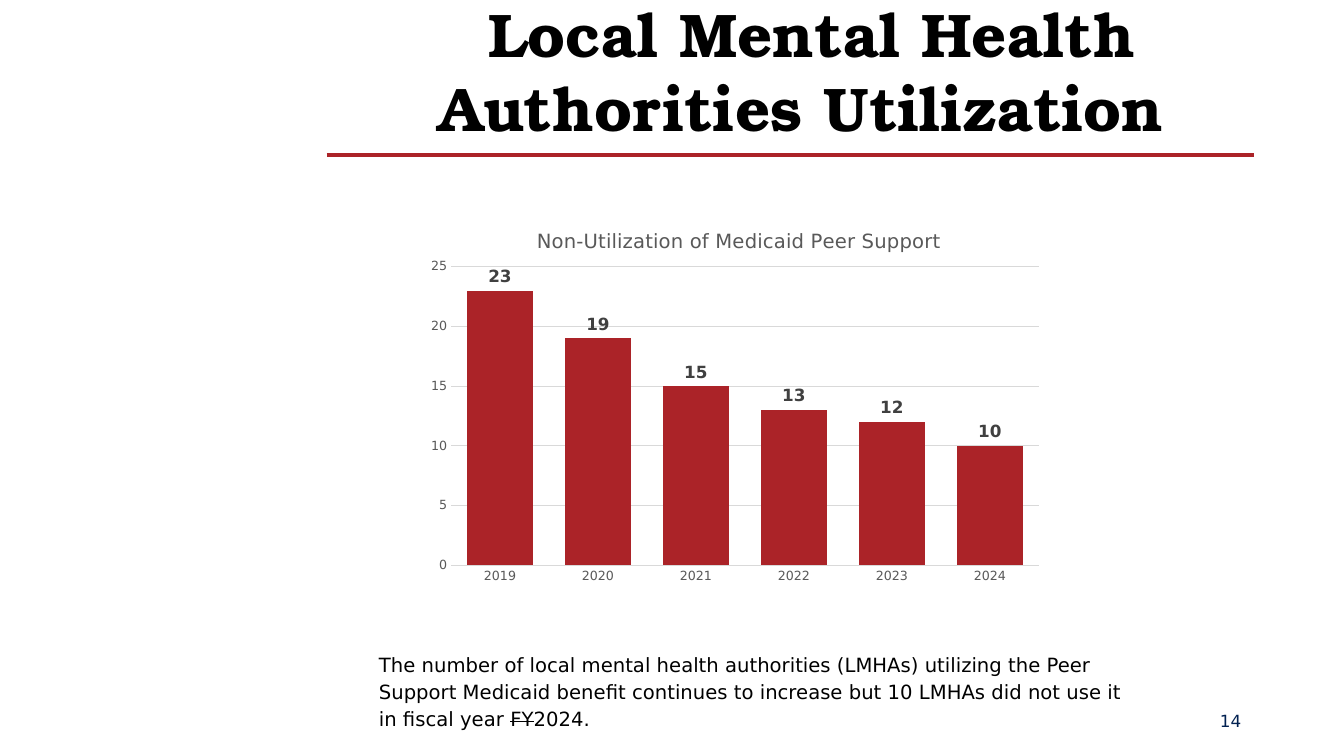
import pptx
import pptx.chart.data
import pptx.dml.color
import pptx.enum.chart
import pptx.enum.shapes
import pptx.enum.text
import pptx.oxml
import pptx.oxml.ns
import pptx.util
from pptx.util import Inches, Pt

COLORS = {"red": "AB2328", "black": "000000", "navy": "022151",
          "axis": "595959", "grid": "D9D9D9", "label": "404040"}
BODY_FONT = "DejaVu Sans"
ALIGN = pptx.enum.text.PP_ALIGN
ANCHOR = pptx.enum.text.MSO_ANCHOR


def style_font(font, size, color, name=BODY_FONT, bold=False):
    font.size = Pt(size)
    font.name = name
    font.bold = bold
    font.color.rgb = pptx.dml.color.RGBColor.from_string(COLORS[color])


def place_in_chart(element, index, **fractions):
    qn = pptx.oxml.ns.qn
    for old_layout in element.findall(qn("c:layout")):
        element.remove(old_layout)
    target = '<c:layoutTarget val="inner"/>' if "w" in fractions else ""
    modes = "".join(f'<c:{key}Mode val="edge"/>' for key in "xy")
    values = "".join(f'<c:{key} val="{value}"/>' for key, value in fractions.items())
    element.insert(index, pptx.oxml.parse_xml(
        f'<c:layout {pptx.oxml.ns.nsdecls("c")}><c:manualLayout>'
        f'{target}{modes}{values}</c:manualLayout></c:layout>'))


deck = pptx.Presentation()
deck.slide_width = Inches(13.33)
deck.slide_height = Inches(7.5)
slide = deck.slides.add_slide(deck.slide_layouts[5])

title_rule = slide.shapes.add_connector(
    pptx.enum.shapes.MSO_CONNECTOR.STRAIGHT,
    Inches(3.24), Inches(1.54), Inches(12.44), Inches(1.54))
title_rule.line.color.rgb = pptx.dml.color.RGBColor.from_string(COLORS["red"])
title_rule.line.width = Pt(3)
title_rule._element.spPr.append(
    pptx.oxml.parse_xml(f'<a:effectLst {pptx.oxml.ns.nsdecls("a")}/>'))

title = slide.shapes.title
title.left, title.top = Inches(3.24), Inches(0.67)
title.width, title.height = Inches(9.63), Inches(0.81)
title.text_frame.auto_size = pptx.enum.text.MSO_AUTO_SIZE.NONE
title.text_frame.word_wrap = True
title.text_frame.vertical_anchor = ANCHOR.BOTTOM
heading = title.text_frame.paragraphs[0]
heading.alignment = ALIGN.CENTER
heading_run = heading.add_run()
heading_run.text = "Local Mental Health Authorities Utilization "
style_font(heading_run.font, 44, "black", "TeX Gyre Bonum", True)

summary = slide.shapes.add_textbox(
    Inches(3.66), Inches(6.39), Inches(7.64), Inches(0.89)).text_frame
summary.word_wrap = True
finding = summary.paragraphs[0]
finding.line_spacing = 1.15
finding.space_after = Pt(8)
for words, struck in [
    ("The number of local mental health authorities (LMHAs) utilizing the Peer "
     "Support Medicaid benefit continues to increase but 10 LMHAs did not use it "
     "in fiscal year ", False),
    ("FY", True),
    ("2024.", False),
]:
    finding_run = finding.add_run()
    finding_run.text = words
    style_font(finding_run.font, 14, "black")
    if struck:
        finding_run._r.get_or_add_rPr().set("strike", "sngStrike")

page_number = slide.shapes.add_textbox(
    Inches(10.17), Inches(6.95), Inches(2.24), Inches(0.4)).text_frame
page_number.word_wrap = True
page_number.vertical_anchor = ANCHOR.MIDDLE
page_number.paragraphs[0].alignment = ALIGN.RIGHT
page_run = page_number.paragraphs[0].add_run()
page_run.text = "14"
style_font(page_run.font, 12, "navy")

utilization = pptx.chart.data.CategoryChartData()
utilization.categories = ["2019", "2020", "2021", "2022", "2023", "2024"]
utilization.add_series("Series 1", (23, 19, 15, 13, 12, 10))
chart = slide.shapes.add_chart(
    pptx.enum.chart.XL_CHART_TYPE.COLUMN_CLUSTERED,
    Inches(4.16), Inches(2.03), Inches(6.27), Inches(3.85), utilization).chart
style_font(chart.font, 10, "black")
chart.has_legend = False

chart.has_title = True
chart_title_run = chart.chart_title.text_frame.paragraphs[0].add_run()
chart_title_run.text = "Non-Utilization of Medicaid Peer Support"
style_font(chart_title_run.font, 14, "axis")
chart.chart_title.include_in_layout = False
place_in_chart(chart.chart_title._element, 1, x=0.18, y=0.05)

columns = chart.plots[0]
columns.gap_width = 50
columns.overlap = -27
columns.vary_by_categories = False
place_in_chart(columns._element.getparent(), 0, x=0.05, y=0.16, w=0.93, h=0.77)

authorities = columns.series[0]
authorities.format.fill.solid()
authorities.format.fill.fore_color.rgb = pptx.dml.color.RGBColor.from_string(COLORS["red"])
counts = authorities.data_labels
counts.show_value = True
counts.position = pptx.enum.chart.XL_LABEL_POSITION.OUTSIDE_END
style_font(counts.font, 12, "label", bold=True)

years, scale = chart.category_axis, chart.value_axis
for axis in (years, scale):
    axis.major_tick_mark = pptx.enum.chart.XL_TICK_MARK.NONE
    axis.minor_tick_mark = pptx.enum.chart.XL_TICK_MARK.NONE
    style_font(axis.tick_labels.font, 9, "axis")
scale.minimum_scale, scale.maximum_scale, scale.major_unit = 0, 25, 5
scale.format.line.fill.background()
scale.has_major_gridlines = True
for line in (years.format.line, scale.major_gridlines.format.line):
    line.color.rgb = pptx.dml.color.RGBColor.from_string(COLORS["grid"])
    line.width = Pt(0.75)

deck.save("out.pptx")
